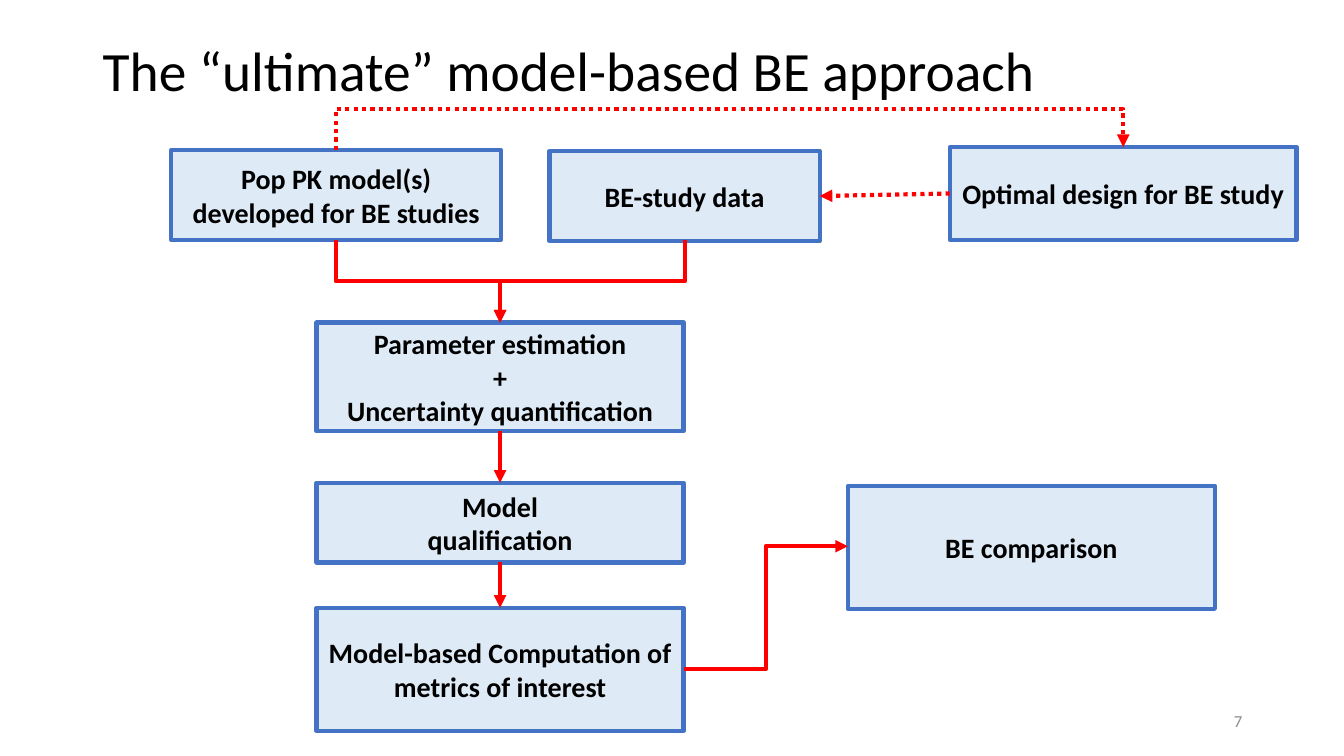
from lxml import etree
from pptx import Presentation
from pptx.dml.color import RGBColor
from pptx.enum import dml, shapes, text
from pptx.oxml.ns import qn
from pptx.util import Inches, Pt

BLACK = RGBColor(0x00, 0x00, 0x00)
GREY = RGBColor(0x8C, 0x8C, 0x8C)
PALE_BLUE = RGBColor(0xDE, 0xEB, 0xF7)
BLUE = RGBColor(0x44, 0x72, 0xC4)
RED = RGBColor(0xFF, 0x00, 0x00)
TOP, LEFT, BOTTOM, RIGHT = range(4)


def write(sp, content, size, color, align, bold=False):
    tf = sp.text_frame
    tf.word_wrap = True
    tf.vertical_anchor = text.MSO_ANCHOR.MIDDLE
    tf.text = content
    for p in tf.paragraphs:
        p.alignment = align
        for r in p.runs:
            r.font.name = "Calibri"
            r.font.size = Pt(size)
            r.font.bold = bold
            r.font.color.rgb = color


def style_arrow(cxn, dotted=False):
    cxn.line.color.rgb = RED
    cxn.line.width = Pt(3)
    if dotted:
        cxn.line.dash_style = dml.MSO_LINE.ROUND_DOT
    sp_pr = cxn._element.spPr
    etree.SubElement(sp_pr.find(qn("a:ln")), qn("a:tailEnd"), type="triangle")
    etree.SubElement(sp_pr, qn("a:effectLst"))


prs = Presentation()
prs.slide_width, prs.slide_height = Inches(13.33), Inches(7.5)
s = prs.slides.add_slide(prs.slide_layouts[6])

title = s.shapes.add_textbox(Inches(0.92), Inches(0.4), Inches(11.25), Inches(0.66))
write(title, "The “ultimate” model-based BE approach", 39.6, BLACK, text.PP_ALIGN.LEFT)
title.text_frame.paragraphs[0].line_spacing = 0.9

page = s.shapes.add_textbox(Inches(9.42), Inches(6.95), Inches(3), Inches(0.4))
write(page, "7", 12, GREY, text.PP_ALIGN.RIGHT)

# name: (text, left, top, width, height)
STEPS = {
    "model": ("Pop PK model(s) developed for BE studies", 1.7, 1.49, 3.27, 0.89),
    "data": ("BE-study data", 5.45, 1.5, 2.68, 0.89),
    "design": ("Optimal design for BE study", 9.42, 1.46, 3.44, 0.92),
    "estimation": ("Parameter estimation\n+\nUncertainty quantification", 3.14, 3.2, 3.64, 1.08),
    "qualification": ("Model\nqualification", 3.14, 4.79, 3.64, 0.79),
    "metrics": ("Model-based Computation of metrics of interest", 3.14, 6.03, 3.64, 1.22),
    "comparison": ("BE comparison", 8.41, 4.82, 3.64, 1.22),
}
boxes = {}
for name, (label, *frame) in STEPS.items():
    sp = s.shapes.add_shape(shapes.MSO_SHAPE.RECTANGLE, *map(Inches, frame))
    sp.shadow.inherit = False
    sp.fill.solid()
    sp.fill.fore_color.rgb = PALE_BLUE
    sp.line.color.rgb = BLUE
    sp.line.width = Pt(3)
    write(sp, label, 20, BLACK, text.PP_ALIGN.CENTER, bold=True)
    boxes[name] = sp

for start, start_side, end, end_side, dotted in [
    ("design", LEFT, "data", RIGHT, True),
    ("estimation", BOTTOM, "qualification", TOP, False),
    ("qualification", BOTTOM, "metrics", TOP, False),
]:
    cxn = s.shapes.add_connector(shapes.MSO_CONNECTOR.STRAIGHT, 0, 0, 0, 0)
    cxn.begin_connect(boxes[start], start_side)
    cxn.end_connect(boxes[end], end_side)
    style_arrow(cxn, dotted)

# An elbow leaves sideways; to leave vertically it is laid out a quarter turn
# back around its centre and then rotated by 90 degrees.
# (x1, y1, x2, y2, bend as a share of the way, vertical, dotted)
for x1, y1, x2, y2, bend, vertical, dotted in [
    (6.79, 2.38, 4.96, 3.2, 0.5, True, False),
    (3.33, 2.38, 4.96, 3.2, 0.5, True, False),
    (6.78, 6.64, 8.41, 5.42, 0.5, False, False),
    (3.33, 1.49, 11.14, 1.46, 13.67, True, True),
]:
    cx, cy = (x1 + x2) / 2, (y1 + y2) / 2
    dx, dy = (x2 - x1) / 2, (y2 - y1) / 2
    if vertical:
        dx, dy = dy, -dx
    ends = map(Inches, (cx - dx, cy - dy, cx + dx, cy + dy))
    cxn = s.shapes.add_connector(shapes.MSO_CONNECTOR.ELBOW, *ends)
    sp_pr = cxn._element.spPr
    if vertical:
        sp_pr.find(qn("a:xfrm")).set("rot", str(90 * 60000))
    guides = sp_pr.find(qn("a:prstGeom")).find(qn("a:avLst"))
    etree.SubElement(guides, qn("a:gd"), name="adj1", fmla=f"val {round(bend * 100000)}")
    style_arrow(cxn, dotted)

prs.save("out.pptx")
